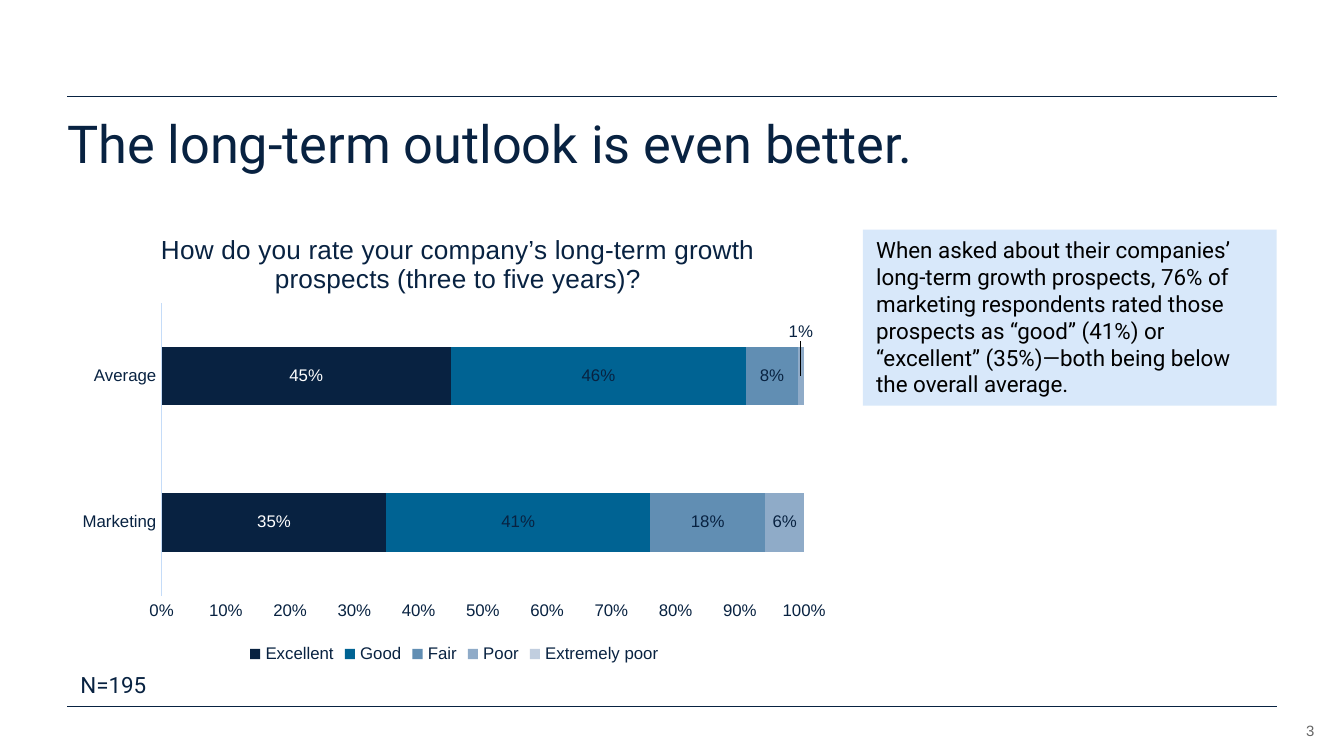
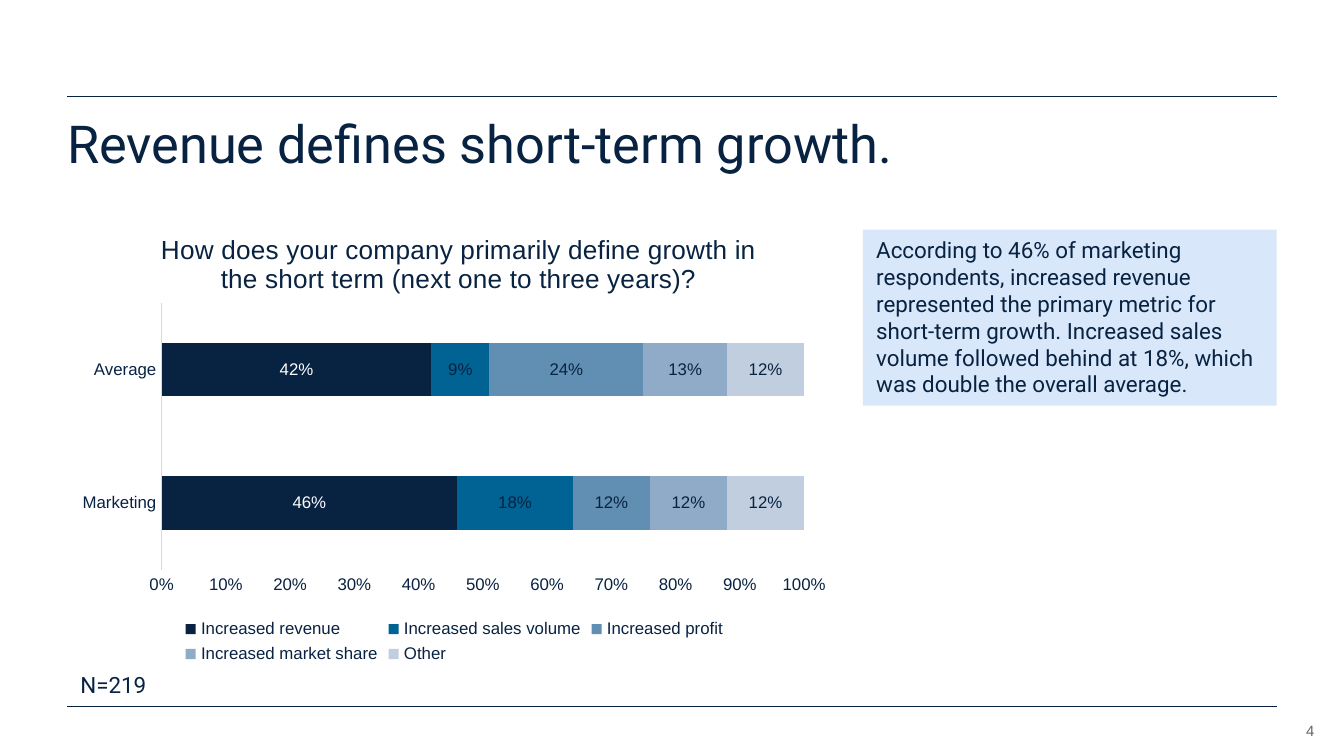
"""Builds two survey slides, each with a stacked bar chart and a callout."""
from lxml import etree
from pptx import Presentation
from pptx.chart.data import CategoryChartData
from pptx.dml.color import RGBColor
from pptx.enum import chart as ch, shapes, text
from pptx.oxml import parse_xml
from pptx.oxml.ns import nsdecls, qn
from pptx.util import Cm, Pt

NAVY, WHITE, BLACK, GREY, PALE, AXIS = "082241", "FFFFFF", "000000", "666666", "D8E8FA", "C5DCF8"
SERIES_COLORS = [NAVY, "006393", "618EB3", "8FABC8", "C1CEDF"]
HEADING_FONT, CHART_FONT = "Roboto", "Arial"
PAGE_WIDTH, PAGE_HEIGHT, MARGIN = 25.4, 14.29, 1.27
CONTENT_WIDTH = PAGE_WIDTH - 2 * MARGIN
RULE_TOPS = (1.83, 13.36)
CALLOUT_WIDTH = 7.82
CATEGORIES = ["Marketing", "Average"]

SURVEYS = [
    dict(
        title="The long-term outlook is even better.",
        callout="When asked about their companies’ long-term growth prospects, 76% of marketing "
                "respondents rated those prospects as “good” (41%) or “excellent” (35%)—both "
                "being below the overall average.",
        callout_color=BLACK,
        sample="N=195",
        question="How do you rate your company’s long-term growth prospects (three to five years)?",
        answers=[("Excellent", (0.35, 0.45)), ("Good", (0.41, 0.46)), ("Fair", (0.18, 0.08)),
                 ("Poor", (0.06, 0.01)), ("Extremely poor", (None, None))],
        plot_height=0.63,
        raised_label=(3, 1),
    ),
    dict(
        title="Revenue defines short-term growth.",
        callout="According to 46% of marketing respondents, increased revenue represented the "
                "primary metric for short-term growth. Increased sales volume followed behind "
                "at 18%, which was double the overall average.",
        callout_color=NAVY,
        sample="N=219",
        question="How does your company primarily define growth in the short term "
                 "(next one to three years)?",
        answers=[("Increased revenue", (0.46, 0.42)), ("Increased sales volume", (0.18, 0.09)),
                 ("Increased profit", (0.12, 0.24)), ("Increased market share", (0.12, 0.13)),
                 ("Other", (0.12, 0.12))],
        plot_height=0.575,
        raised_label=None,
    ),
]


def rgb(value):
    """Turn a hex string into a colour."""
    return RGBColor.from_string(value)


def style(font, size, color=NAVY, name=CHART_FONT):
    """Set the look of a font."""
    font.size, font.name, font.bold = Pt(size), name, False
    font.color.rgb = rgb(color)


def write(slide, words, left, top, width, height, size=12, color=NAVY, font=HEADING_FONT,
          fill=None, inset=True, align=text.PP_ALIGN.LEFT, anchor=text.MSO_ANCHOR.TOP,
          spacing=None):
    """Place a text box, or a filled rectangle with text."""
    box = Cm(left), Cm(top), Cm(width), Cm(height)
    if fill:
        holder = slide.shapes.add_shape(shapes.MSO_SHAPE.RECTANGLE, *box)
        holder.shadow.inherit = False
        holder.fill.solid()
        holder.fill.fore_color.rgb = rgb(fill)
        holder.line.fill.background()
    else:
        holder = slide.shapes.add_textbox(*box)
    frame = holder.text_frame
    frame.word_wrap, frame.vertical_anchor = True, anchor
    if not inset:
        frame.margin_left = frame.margin_right = frame.margin_top = frame.margin_bottom = 0
    paragraph = frame.paragraphs[0]
    paragraph.alignment, paragraph.line_spacing = align, spacing
    run = paragraph.add_run()
    run.text = words
    style(run.font, size, color, font)


def add_rule(slide, top):
    """Draw a thin line across the content width."""
    rule = slide.shapes.add_connector(shapes.MSO_CONNECTOR.STRAIGHT, Cm(MARGIN), Cm(top),
                                      Cm(MARGIN + CONTENT_WIDTH), Cm(top))
    rule.line.color.rgb, rule.line.width = rgb(NAVY), Pt(0.5)
    etree.SubElement(rule.element.spPr, qn("a:effectLst"))


def manual_layout(target="", **places):
    """Make a chart layout from fractions of the chart's size."""
    inner = f'<c:layoutTarget val="{target}"/>' if target else ""
    modes = "".join(f'<c:{axis}Mode val="edge"/>' for axis in "xy") if target != "" or "x" in places else ""
    values = "".join(f'<c:{key} val="{value}"/>' for key, value in places.items())
    return parse_xml(f'<c:layout {nsdecls("c")}><c:manualLayout>{inner}{modes}{values}'
                     '</c:manualLayout></c:layout>')


def set_layout(parent, layout, before):
    """Put a layout in front of a child element, in place of any older one."""
    for old in parent.findall(qn("c:layout")):
        parent.remove(old)
    parent.find(qn(before)).addprevious(layout)


def raise_label(series, index):
    """Lift one value label above its bar."""
    label = series.points[index].data_label
    style(label.font, 9)
    label.position = ch.XL_LABEL_POSITION.CENTER
    element = series.data_labels._element.find(qn("c:dLbl"))
    element.find(qn("c:idx")).addnext(manual_layout(y=-0.095))
    element.find(qn("c:layout")).addnext(
        parse_xml(f'<c:numFmt {nsdecls("c")} formatCode="0%" sourceLinked="0"/>'))


def add_survey_chart(slide, survey):
    """Draw the answers as bars stacked to 100%."""
    data = CategoryChartData(number_format="0%")
    data.categories = CATEGORIES
    for name, shares in survey["answers"]:
        data.add_series(name, shares)
    chart = slide.shapes.add_chart(ch.XL_CHART_TYPE.BAR_STACKED_100, Cm(MARGIN), Cm(3.86),
                                   Cm(14.63), Cm(8.79), data).chart
    style(chart.font, 10)

    question = chart.chart_title.text_frame.paragraphs[0].add_run()
    question.text = survey["question"]
    style(question.font, 14)
    chart.chart_title.include_in_layout = False
    set_layout(chart.chart_title._element, manual_layout(x=0.115, y=0.05), "c:overlay")

    chart.has_legend = True
    chart.legend.position = ch.XL_LEGEND_POSITION.BOTTOM
    chart.legend.include_in_layout = False
    style(chart.legend.font, 9)

    for axis in (chart.category_axis, chart.value_axis):
        axis.major_tick_mark = axis.minor_tick_mark = ch.XL_TICK_MARK.NONE
        axis.has_major_gridlines = False
        style(axis.tick_labels.font, 9)
    chart.category_axis.format.line.color.rgb = rgb(AXIS)
    chart.category_axis.format.line.width = Pt(0.75)
    chart.value_axis.format.line.fill.background()
    chart.value_axis.tick_labels.number_format = "0%"
    chart.value_axis.tick_labels.number_format_is_linked = False
    chart.value_axis.major_unit = 0.1

    plot = chart.plots[0]
    plot.gap_width, plot.overlap, plot.vary_by_categories = 150, 100, False
    for series, color in zip(plot.series, SERIES_COLORS):
        series.format.fill.solid()
        series.format.fill.fore_color.rgb = rgb(color)
        labels = series.data_labels
        labels.show_value = True
        labels.number_format, labels.number_format_is_linked = "0%", False
        labels.position = ch.XL_LABEL_POSITION.CENTER
        style(labels.font, 9, WHITE if color == NAVY else NAVY)
    if survey["raised_label"]:
        answer, category = survey["raised_label"]
        raise_label(plot.series[answer], category)
    set_layout(plot._element.getparent(),
               manual_layout("inner", x=0.122, y=0.212, w=0.83, h=survey["plot_height"]),
               "c:barChart")


def add_survey_slide(deck, survey, number):
    """Add one slide with its rules, title, callout, chart and number."""
    slide = deck.slides.add_slide(deck.slide_layouts[6])
    for top in RULE_TOPS:
        add_rule(slide, top)
    write(slide, str(number), 23.65, 13.51, 1.19, 0.46, size=8, color=GREY, font=CHART_FONT,
          inset=False, align=text.PP_ALIGN.RIGHT, anchor=text.MSO_ANCHOR.BOTTOM)
    write(slide, survey["title"], MARGIN, 2.24, CONTENT_WIDTH, 1.4, size=28, inset=False,
          spacing=0.9)
    write(slide, survey["callout"], PAGE_WIDTH - MARGIN - CALLOUT_WIDTH, 4.34, CALLOUT_WIDTH,
          3.33, color=survey["callout_color"], fill=PALE)
    write(slide, survey["sample"], MARGIN, 12.57, 3.02, 0.76)
    add_survey_chart(slide, survey)


def main():
    """Build and save the deck."""
    deck = Presentation()
    deck.slide_width, deck.slide_height = Cm(PAGE_WIDTH), Cm(PAGE_HEIGHT)
    for number, survey in enumerate(SURVEYS, start=3):
        add_survey_slide(deck, survey, number)
    deck.save("out.pptx")


if __name__ == "__main__":
    main()
